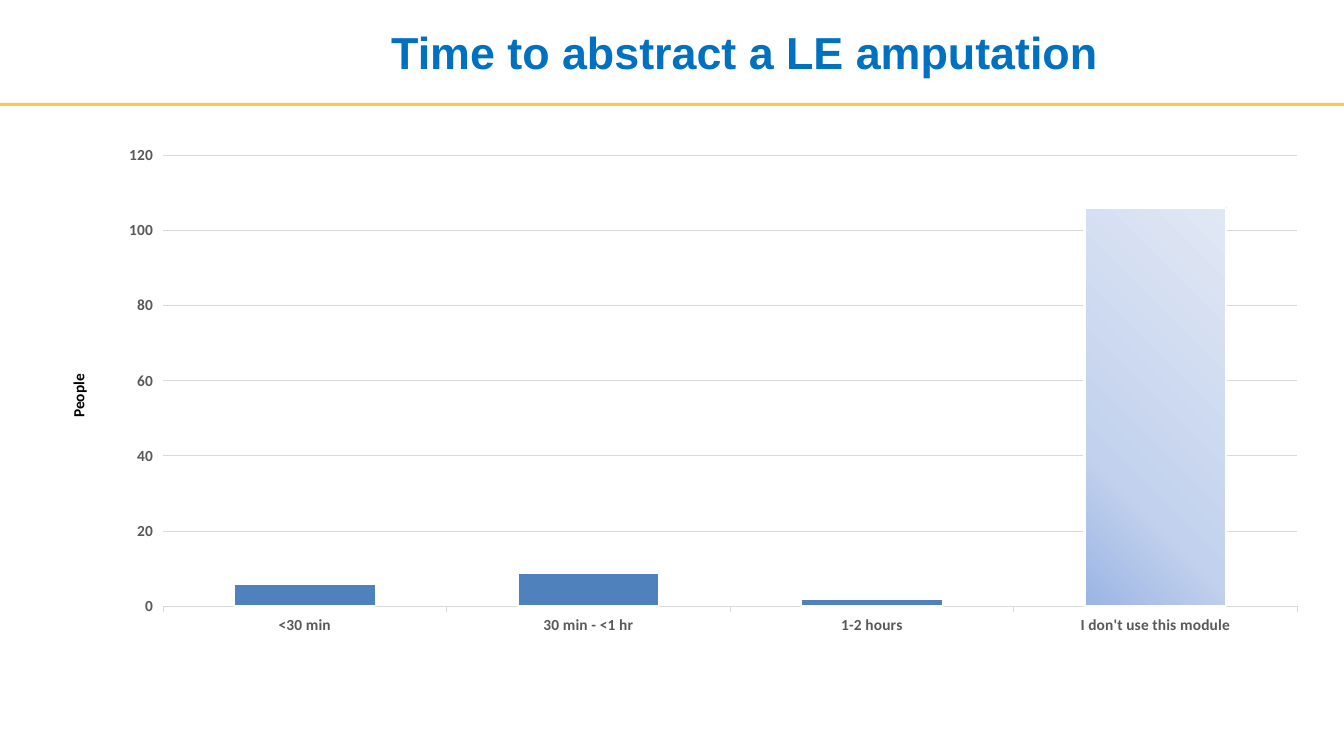
from copy import deepcopy

from lxml import etree
from pptx import Presentation
from pptx.chart.data import CategoryChartData
from pptx.dml.color import RGBColor
from pptx.enum import chart as ch, shapes, text
from pptx.oxml import ns
from pptx.util import Inches, Pt

BLUE = RGBColor(0x00, 0x70, 0xC0)
GOLD = RGBColor(0xFF, 0xC8, 0x43)
BAR = RGBColor(0x4F, 0x81, 0xBD)
WHITE = RGBColor(0xFF, 0xFF, 0xFF)
BLACK = RGBColor(0x00, 0x00, 0x00)
GRAY = RGBColor(0x59, 0x59, 0x59)
GRID = RGBColor(0xD9, 0xD9, 0xD9)
FADE = [(0, RGBColor(0x9A, 0xB5, 0xE4)),
        (0.3, RGBColor(0xC2, 0xD1, 0xED)),
        (1, RGBColor(0xE1, 0xE8, 0xF5))]

TIMES = {"<30 min": 6, "30 min - <1 hr": 9, "1-2 hours": 2,
         "I don't use this module": 106}


def set_font(font, size=11, color=BLACK, name="Calibri"):
    font.size, font.bold, font.name = Pt(size), True, name
    font.color.rgb = color


def write(tf, words, **fmt):
    p = tf.paragraphs[0]
    p.alignment = text.PP_ALIGN.LEFT
    r = p.add_run()
    r.text = words
    set_font(r.font, **fmt)


def add_header(s, x, y, w, h):
    # Gold rule below the title band
    rule = s.shapes.add_shape(shapes.MSO_SHAPE.RECTANGLE, x, y + h, w, Inches(0.03))
    rule.shadow.inherit = False
    rule.fill.solid()
    rule.fill.fore_color.rgb = GOLD
    rule.line.fill.background()

    # Title
    title = s.shapes.title
    title.left, title.top = x + Inches(3.78), y
    title.width, title.height = Inches(8.67), h
    tf = title.text_frame
    tf.vertical_anchor = text.MSO_ANCHOR.MIDDLE
    write(tf, "Time to abstract a LE amputation", size=32, color=BLUE, name="Arial")


def fade_fill(fill):
    fill.gradient()
    fill.gradient_angle = 45
    stops = fill.gradient_stops
    first = stops[0]._gs
    first.addnext(deepcopy(first))
    for stop, (position, color) in zip(fill.gradient_stops, FADE):
        stop.position = position
        stop.color.rgb = color


def set_plot_layout(chart, **box):
    plot_area = chart._chartSpace.chart.plotArea
    for old in plot_area.findall(ns.qn("c:layout")):
        plot_area.remove(old)
    layout = etree.Element(ns.qn("c:layout"))
    manual = etree.SubElement(layout, ns.qn("c:manualLayout"))
    settings = {"layoutTarget": "inner", "xMode": "edge", "yMode": "edge", **box}
    for tag, val in settings.items():
        etree.SubElement(manual, ns.qn("c:" + tag)).set("val", str(val))
    plot_area.insert(0, layout)


def add_time_chart(s, x, y, w, h):
    data = CategoryChartData()
    data.categories = list(TIMES)
    data.add_series("Series 1", list(TIMES.values()))
    chart = s.shapes.add_chart(ch.XL_CHART_TYPE.COLUMN_CLUSTERED, x, y, w, h, data).chart
    chart.has_legend = chart.has_title = False
    set_font(chart.font)
    set_plot_layout(chart, x=0.047, y=0.038, w=0.932, h=0.886)

    # Axes
    cat, val = chart.category_axis, chart.value_axis
    for axis in (cat, val):
        axis.major_tick_mark = ch.XL_TICK_MARK.OUTSIDE
        set_font(axis.tick_labels.font, color=GRAY)
    val.minimum_scale, val.maximum_scale, val.major_unit = 0, 120, 20
    val.format.line.fill.background()
    for line in (cat.format.line, val.major_gridlines.format.line):
        line.color.rgb = GRID
        line.width = Pt(0.75)

    # Columns, the last one faded
    plot = chart.plots[0]
    plot.gap_width, plot.vary_by_categories = 100, False
    series = plot.series[0]
    last = series.points[len(TIMES) - 1]
    series.format.fill.solid()
    series.format.fill.fore_color.rgb = BAR
    fade_fill(last.format.fill)
    for part in (series, last):
        part.format.line.color.rgb = WHITE
        part.format.line.width = Pt(1.5)


def add_axis_label(s, x, y, w, h):
    label = s.shapes.add_textbox(x, y, w, h)
    label.rotation = 270
    tf = label.text_frame
    tf.word_wrap = True
    tf.auto_size = text.MSO_AUTO_SIZE.SHAPE_TO_FIT_TEXT
    write(tf, "People")


def main():
    prs = Presentation()
    prs.slide_width, prs.slide_height = Inches(13.33), Inches(7.5)
    s = prs.slides.add_slide(prs.slide_layouts[5])
    add_header(s, 0, 0, prs.slide_width, Inches(1.02))
    add_time_chart(s, Inches(1.05), Inches(1.35), Inches(12.07), Inches(5.05))
    add_axis_label(s, Inches(-0.91), Inches(2.41), Inches(3.38), Inches(0.29))
    prs.save("out.pptx")


if __name__ == "__main__":
    main()
